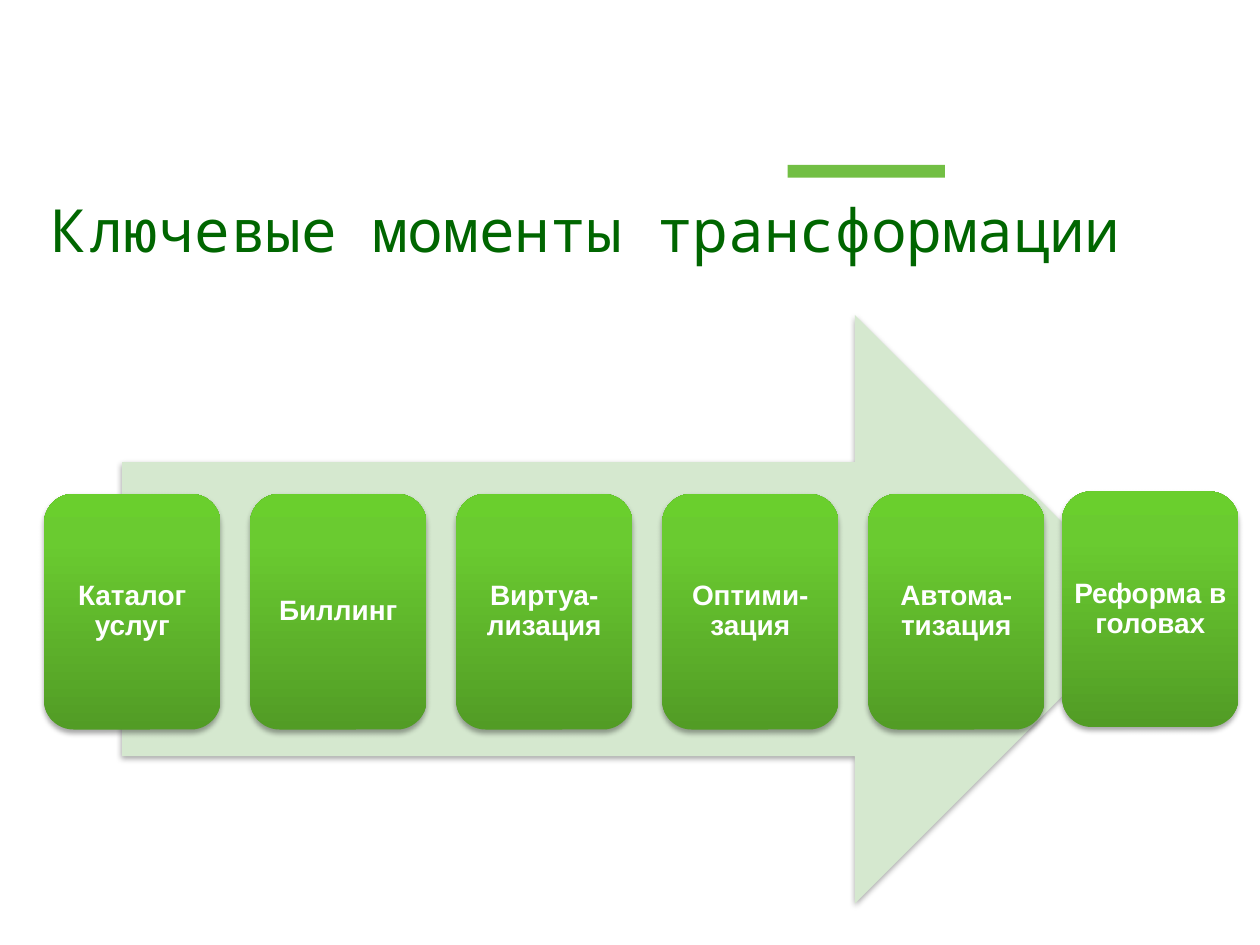
from copy import deepcopy

from lxml import etree
from pptx import Presentation
from pptx.dml.color import RGBColor
from pptx.enum.shapes import MSO_SHAPE
from pptx.enum.text import MSO_ANCHOR, MSO_AUTO_SIZE, PP_ALIGN
from pptx.oxml.ns import qn
from pptx.util import Inches, Pt

RECTANGLE = MSO_SHAPE.RECTANGLE
ROUNDED = MSO_SHAPE.ROUNDED_RECTANGLE
RIGHT_ARROW = MSO_SHAPE.RIGHT_ARROW
MIDDLE = MSO_ANCHOR.MIDDLE
LEFT, CENTER = PP_ALIGN.LEFT, PP_ALIGN.CENTER
NO_AUTOFIT = MSO_AUTO_SIZE.NONE

STEP_GRADIENT = [(0, "529C25"), (0.8, "6ACB30"), (1, "6ACF2D")]
STEPS = ["Каталог услуг", "Биллинг", "Виртуа-лизация", "Оптими-зация", "Автома-тизация"]
STEP_LEFT, STEP_TOP, STEP_PITCH = 0.35, 3.92, 1.635
STEP_WIDTH, STEP_HEIGHT = 1.4, 1.87


def rgb(value):
    return RGBColor.from_string(value)


def set_text(shape, text, *, font, size, color, bold=False, align=LEFT,
             spacing=1.0, margin=0.1):
    frame = shape.text_frame
    frame.auto_size = NO_AUTOFIT
    frame.word_wrap = True
    frame.vertical_anchor = MIDDLE
    frame.margin_left = frame.margin_right = Inches(margin)
    frame.text = text
    paragraph = frame.paragraphs[0]
    paragraph.alignment = align
    paragraph.line_spacing = spacing
    paragraph.font.name = font
    paragraph.font.size = Pt(size)
    paragraph.font.bold = bold
    paragraph.font.color.rgb = rgb(color)


def add_shape(slide, kind, left, top, width, height, fill=None):
    shape = slide.shapes.add_shape(
        kind, Inches(left), Inches(top), Inches(width), Inches(height))
    shape.shadow.inherit = False
    shape.line.fill.background()
    if fill:
        shape.fill.solid()
        shape.fill.fore_color.rgb = rgb(fill)
    return shape


def add_soft_shadow(shape):
    effects = shape._element.spPr.find(qn("a:effectLst"))
    shadow = etree.SubElement(
        effects, qn("a:outerShdw"), blurRad=str(Pt(3.1)), dist=str(Pt(1.8)),
        dir="5400000", rotWithShape="0")
    color = etree.SubElement(shadow, qn("a:srgbClr"), val="000000")
    etree.SubElement(color, qn("a:alpha"), val="35000")


def set_gradient(shape, stops, angle):
    shape.fill.gradient()
    shape.fill.gradient_angle = angle
    stop_list = shape._element.spPr.find(qn("a:gradFill")).find(qn("a:gsLst"))
    while len(stop_list) < len(stops):
        stop_list.append(deepcopy(stop_list[-1]))
    for stop, (position, color) in zip(shape.fill.gradient_stops, stops):
        stop.position = position
        stop.color.rgb = rgb(color)


def add_step(slide, text, left, top):
    step = add_shape(slide, ROUNDED, left, top, STEP_WIDTH, STEP_HEIGHT)
    set_gradient(step, STEP_GRADIENT, 90)
    add_soft_shadow(step)
    set_text(step, text, font="Arial", size=16, color="FFFFFF", bold=True,
             align=CENTER, spacing=0.9, margin=0)


def add_title(slide, text):
    title = slide.shapes.title
    title.left, title.top = Inches(0.31), Inches(1.44)
    title.width, title.height = Inches(9.69), Inches(0.86)
    set_text(title, text, font="Noto Sans Mono", size=34, color="006600", spacing=0.8)


def main():
    presentation = Presentation()
    presentation.slide_width, presentation.slide_height = Inches(10), Inches(7.5)
    slide = presentation.slides.add_slide(presentation.slide_layouts[5])

    # Title with its accent bar
    add_shape(slide, RECTANGLE, 6.25, 1.31, 1.25, 0.1, "72BF44")
    add_title(slide, "Ключевые моменты трансформации")

    # Arrow behind the steps
    arrow = add_shape(slide, RIGHT_ARROW, 0.97, 2.5, 8.15, 4.67, "D5E8CF")
    add_soft_shadow(arrow)

    # Evenly spaced steps, then the final one set closer and slightly higher
    for index, text in enumerate(STEPS):
        add_step(slide, text, STEP_LEFT + index * STEP_PITCH, STEP_TOP)
    add_step(slide, "Реформа в головах", 8.43, 3.9)

    presentation.save("out.pptx")


if __name__ == "__main__":
    main()
